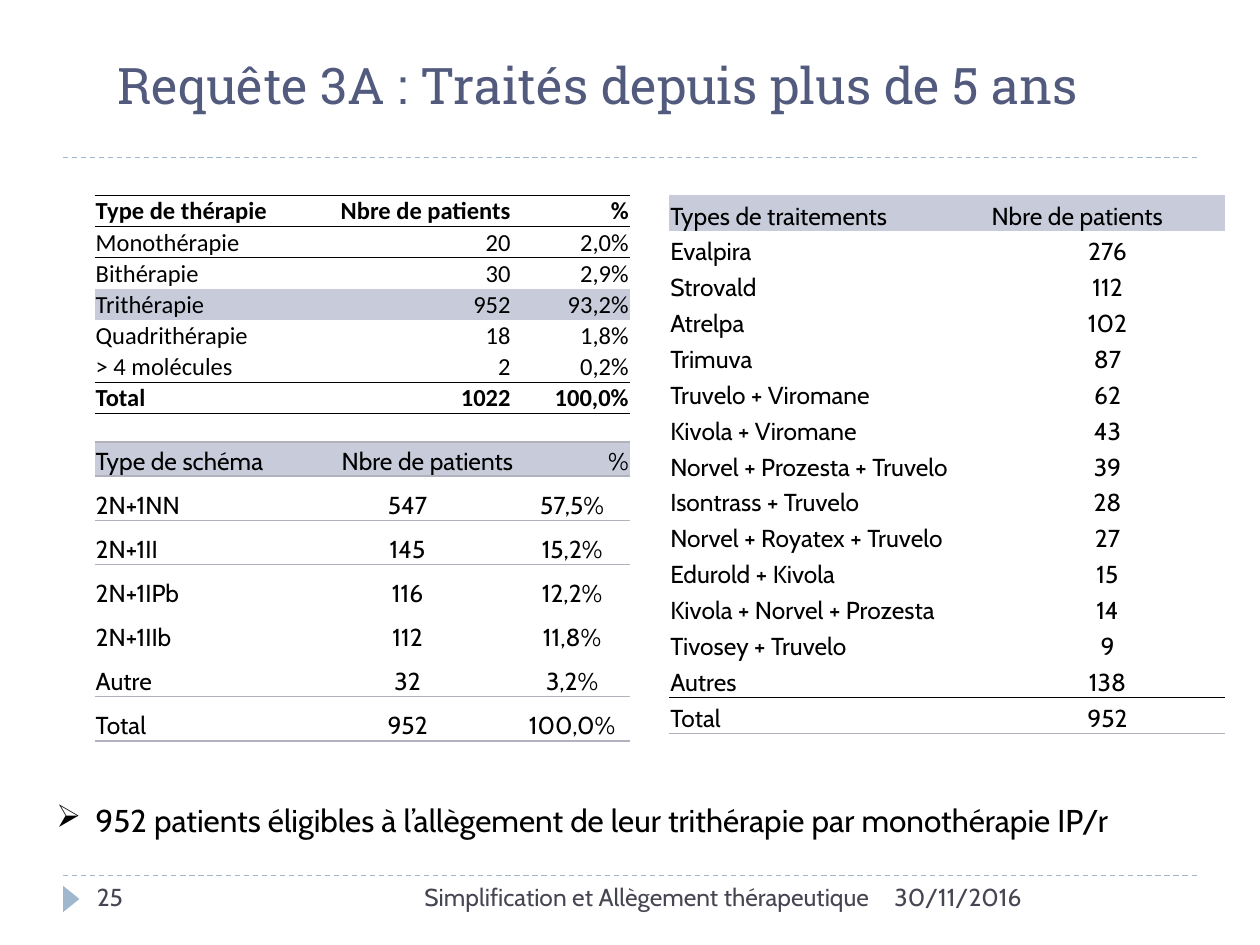
from lxml import etree
from pptx import Presentation, util as u
from pptx.dml import color
from pptx.enum import dml, shapes, text
from pptx.oxml import ns

COLUMN = ROW = u.Inches(0.25)
LEFT, RIGHT, CENTER = text.PP_ALIGN.LEFT, text.PP_ALIGN.RIGHT, text.PP_ALIGN.CENTER
BLACK, BAND, RULE, ACCENT, FOOTER = "000000", "C7CBDA", "B2B2BE", "9FB8CD", "464653"
PLAIN_STYLE = "{2D5ABB26-0587-4C30-8999-92F81FD0307C}"

THERAPIES = [
    ("Type de thérapie", "Nbre de patients", "%"),
    ("Monothérapie", "20", "2,0%"),
    ("Bithérapie", "30", "2,9%"),
    ("Trithérapie", "952", "93,2%"),
    ("Quadrithérapie", "18", "1,8%"),
    ("> 4 molécules", "2", "0,2%"),
    ("Total", "1022", "100,0%"),
]
SCHEMAS = [
    ("Type de schéma", "Nbre de patients", "%"),
    ("2N+1NN", "547", "57,5%"),
    ("2N+1II", "145", "15,2%"),
    ("2N+1IPb", "116", "12,2%"),
    ("2N+1IIb", "112", "11,8%"),
    ("Autre", "32", "3,2%"),
    ("Total", "952", "100,0%"),
]
TREATMENTS = [
    ("Types de traitements", "Nbre de patients"),
    ("Evalpira", "276"),
    ("Strovald", "112"),
    ("Atrelpa", "102"),
    ("Trimuva", "87"),
    ("Truvelo + Viromane", "62"),
    ("Kivola + Viromane", "43"),
    ("Norvel + Prozesta + Truvelo", "39"),
    ("Isontrass + Truvelo", "28"),
    ("Norvel + Royatex + Truvelo", "27"),
    ("Edurold + Kivola", "15"),
    ("Kivola + Norvel + Prozesta", "14"),
    ("Tivosey + Truvelo", "9"),
    ("Autres", "138"),
    ("Total", "952"),
]


def rgb(value):
    return color.RGBColor.from_string(value)


def grid(left, top, width, height):
    return (round(left * COLUMN), round(top * ROW),
            round(width * COLUMN), round(height * ROW))


def add_run(paragraph, words, size, font, ink, bold=False):
    run = paragraph.add_run()
    run.text = words
    run.font.size = u.Pt(size)
    run.font.name = font
    run.font.bold = bold
    run.font.color.rgb = rgb(ink)


def add_title(slide, words, box):
    title = slide.shapes.title
    title.left, title.top, title.width, title.height = grid(*box)
    title.text_frame.vertical_anchor = text.MSO_ANCHOR.BOTTOM
    paragraph = title.text_frame.paragraphs[0]
    paragraph.alignment = LEFT
    add_run(paragraph, words, 28.8, "Roboto Slab", "525B7E")


def add_text(slide, words, box, size, ink, alignment=LEFT):
    frame = slide.shapes.add_textbox(*grid(*box)).text_frame
    frame.word_wrap = True
    paragraph = frame.paragraphs[0]
    paragraph.alignment = alignment
    add_run(paragraph, words, size, "Cabin", ink)
    return paragraph


def add_bullet(paragraph, symbol, indent):
    properties = paragraph._p.get_or_add_pPr()
    properties.set("marL", str(u.Inches(indent)))
    properties.set("indent", str(-u.Inches(indent)))
    etree.SubElement(properties, ns.qn("a:buChar")).set("char", symbol)


def add_divider(slide, row):
    left, top, width, _ = grid(2, row, 36, 0)
    divider = slide.shapes.add_connector(
        shapes.MSO_CONNECTOR.STRAIGHT, left, top, left + width, top)
    divider.line.color.rgb = rgb(ACCENT)
    divider.line.width = u.Pt(0.75)
    divider.line.dash_style = dml.MSO_LINE.DASH
    etree.SubElement(divider._element.spPr, ns.qn("a:effectLst"))


def add_marker(slide, box):
    marker = slide.shapes.add_shape(shapes.MSO_SHAPE.ISOSCELES_TRIANGLE, *grid(*box))
    marker.rotation = 90
    marker.shadow.inherit = False
    marker.fill.solid()
    marker.fill.fore_color.rgb = rgb(ACCENT)
    marker.line.fill.background()


def add_border(cell, side, ink, width):
    border = etree.SubElement(cell._tc.get_or_add_tcPr(), ns.qn(f"a:{side}"))
    border.set("w", str(u.Pt(width)))
    fill = etree.SubElement(border, ns.qn("a:solidFill"))
    etree.SubElement(fill, ns.qn("a:srgbClr")).set("val", ink)


def format_cell(cell, words, alignment, font, bold, banded, borders):
    cell.margin_left = cell.margin_right = cell.margin_top = u.Inches(0.01)
    cell.margin_bottom = 0
    cell.vertical_anchor = text.MSO_ANCHOR.BOTTOM
    paragraph = cell.text_frame.paragraphs[0]
    paragraph.alignment = alignment
    add_run(paragraph, words, 14, font, BLACK, bold)
    for side, (ink, width) in borders.items():
        add_border(cell, side, ink, width)
    if banded:
        cell.fill.solid()
        cell.fill.fore_color.rgb = rgb(BAND)
    else:
        cell.fill.background()


def add_table(slide, rows, box, widths, heights, header, body, rules,
              band=0, font="Cabin", bold_rows=()):
    frame = slide.shapes.add_table(len(rows), len(widths), *grid(*box))
    table = frame.table
    table.first_row = table.horz_banding = False
    table._tbl.tblPr.find(ns.qn("a:tableStyleId")).text = PLAIN_STYLE
    for column, width in zip(table.columns, widths):
        column.width = round(width * COLUMN)
    for index, values in enumerate(rows):
        table.rows[index].height = round(heights[min(index, 1)] * ROW)
        edges = {"lnT": index, "lnB": index + 1}
        borders = {side: rules[edge] for side, edge in edges.items() if edge in rules}
        alignments = body if index else header
        for cell, words, alignment in zip(table.rows[index].cells, values, alignments):
            format_cell(cell, words, alignment, font, index in bold_rows,
                        index == band, borders)


def main():
    presentation = Presentation()
    presentation.slide_width, presentation.slide_height = 40 * COLUMN, 30 * ROW
    slide = presentation.slides.add_slide(presentation.slide_layouts[5])

    for row in (27.8, 5):
        add_divider(slide, row)
    add_marker(slide, (1.84, 28.28, 0.84, 0.52))
    add_title(slide, "Requête 3A : Traités depuis plus de 5 ans", (3.32, 0.84, 34.08, 3))
    conclusion = add_text(
        slide, "952 patients éligibles à l’allègement de leur trithérapie par monothérapie IP/r",
        (1.4, 25.24, 38.12, 1.6), 18, BLACK)
    add_bullet(conclusion, "➢", 0.31)

    add_table(slide, TREATMENTS, (21.24, 6.2, 17.64, 17.16), (10.2, 7.44), (1.14, 1.14),
              (LEFT, LEFT), (LEFT, CENTER), {14: (BLACK, 1), 15: (RULE, 1)})
    add_table(slide, SCHEMAS, (3, 14.04, 17, 9.44), (6.55, 6.78, 3.67), (1.08, 1.4),
              (LEFT, RIGHT, RIGHT), (LEFT, CENTER, CENTER),
              dict.fromkeys((0, 1, 2, 6, 7), (RULE, 1)))
    add_table(slide, THERAPIES, (3, 6.2, 17, 6.92), (6.78, 6.47, 3.75), (0.99, 0.99),
              (LEFT, RIGHT, RIGHT), (LEFT, RIGHT, RIGHT),
              dict.fromkeys((0, 1, 6, 7), (BLACK, 0.5)),
              band=3, font="Calibri", bold_rows=(0, 6))

    add_text(slide, "30/11/2016", (28, 27.8, 10, 1.6), 14, FOOTER)
    add_text(slide, "Simplification et Allègement thérapeutique",
             (12.68, 27.8, 15.32, 1.6), 14, FOOTER, RIGHT)
    add_text(slide, "25", (2.68, 27.8, 8.68, 1.6), 14, FOOTER)
    presentation.save("out.pptx")


if __name__ == "__main__":
    main()
